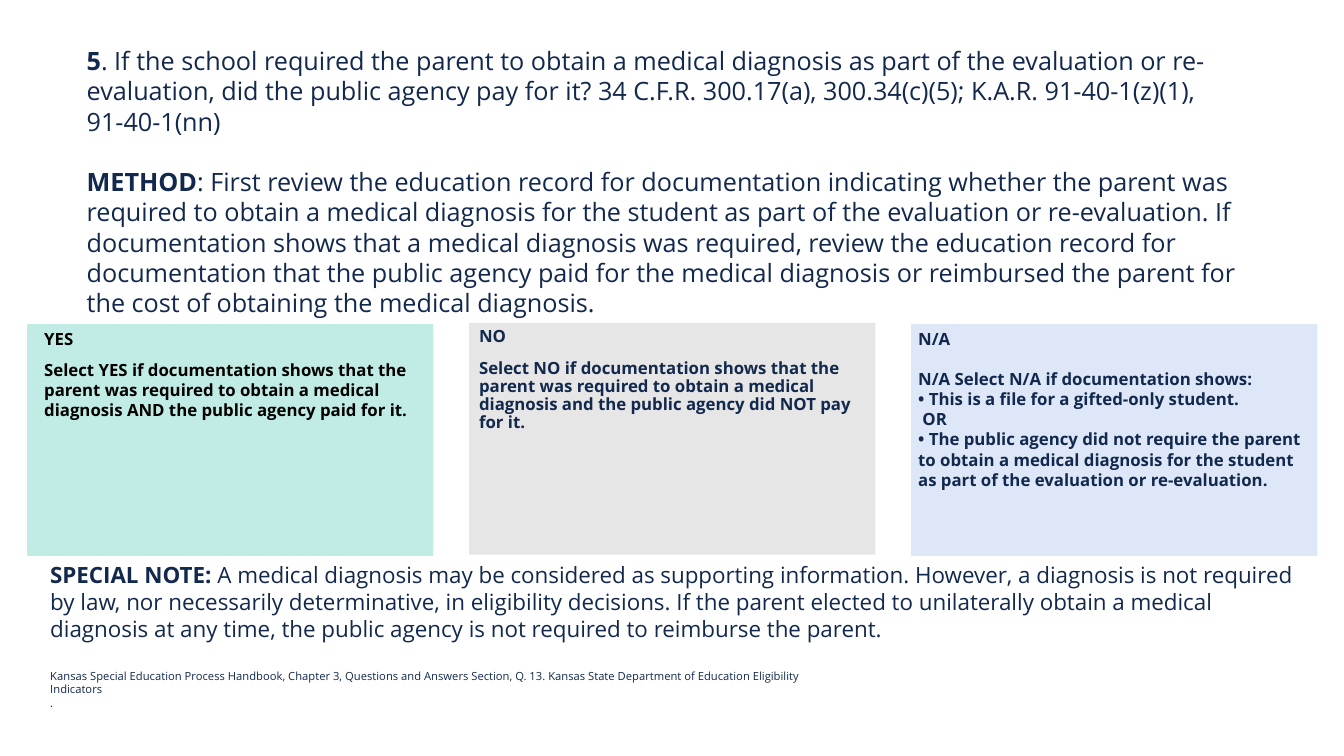
from pptx import Presentation
from pptx.dml.color import RGBColor
from pptx.enum.shapes import MSO_SHAPE
from pptx.enum.text import MSO_ANCHOR, MSO_AUTO_SIZE, PP_ALIGN
from pptx.util import Pt

RECT = MSO_SHAPE.RECTANGLE
TOP = MSO_ANCHOR.TOP
LEFT = PP_ALIGN.LEFT
NO_FIT = MSO_AUTO_SIZE.NONE

FONT = "Open Sans"
COLORS = {
    "navy": "12284C",
    "black": "000000",
    "mint": "C1ECE5",
    "grey": "E6E6E6",
    "blue": "DDE7F7",
}

# Answer cards: equal widths at an equal pitch
CARD_LEFT, CARD_PITCH = 19.4, 315.75
CARD_WIDTH, CARD_HEIGHT = 290.2, 165.6

QUESTION = [
    ("5", ". If the school required the parent to obtain a medical diagnosis as part of "
          "the evaluation or re-evaluation, did the public agency pay for it? "
          "34 C.F.R. 300.17(a), 300.34(c)(5); K.A.R. 91-40-1(z)(1), 91-40-1(nn)"),
    ("METHOD", ": First review the education record for documentation indicating whether "
               "the parent was required to obtain a medical diagnosis for the student as "
               "part of the evaluation or re-evaluation. If documentation shows that a "
               "medical diagnosis was required, review the education record for "
               "documentation that the public agency paid for the medical diagnosis or "
               "reimbursed the parent for the cost of obtaining the medical diagnosis."),
]
YES = [
    "YES",
    "Select YES if documentation shows that the parent was required to obtain a medical "
    "diagnosis AND the public agency paid for it.",
]
NO = [
    "NO",
    "Select NO if documentation shows that the parent was required to obtain a medical "
    "diagnosis and the public agency did NOT pay for it.",
]
NOT_APPLICABLE = [
    "N/A",
    "N/A Select N/A if documentation shows:",
    "• This is a file for a gifted-only student.",
    " OR",
    "• The public agency did not require the parent to obtain a medical diagnosis for "
    "the student as part of the evaluation or re-evaluation.",
]
NOTE = [
    ("SPECIAL NOTE: ",
     "A medical diagnosis may be considered as supporting information. However, a "
     "diagnosis is not required by law, nor necessarily determinative, in eligibility "
     "decisions. If the parent elected to unilaterally obtain a medical diagnosis at any "
     "time, the public agency is not required to reimburse the parent."),
]
SOURCE = [
    ("", "Kansas Special Education Process Handbook, Chapter 3, Questions and Answers "
         "Section, Q. 13. Kansas State Department of Education Eligibility Indicators"),
    ("", "."),
]


def rgb(name):
    return RGBColor.from_string(COLORS[name])


def style_run(r, size, color, bold):
    r.font.name = FONT
    r.font.size = Pt(size)
    r.font.bold = bold
    r.font.color.rgb = rgb(color)


def setup_frame(tf, inset_x=7.2, inset_y=3.6):
    tf.word_wrap = True
    tf.auto_size = NO_FIT
    tf.vertical_anchor = TOP
    tf.margin_left = tf.margin_right = Pt(inset_x)
    tf.margin_top = tf.margin_bottom = Pt(inset_y)


def next_paragraph(tf, i, gap):
    """Return the i-th paragraph, with the gap above all but the first."""
    p = tf.add_paragraph() if i else tf.paragraphs[0]
    p.alignment = LEFT
    p.space_before = Pt(gap if i else 0)
    return p


def fill_labelled(tf, items, size, gap=0):
    """Write paragraphs that open with a bold label."""
    setup_frame(tf)
    for i, (label, body) in enumerate(items):
        p = next_paragraph(tf, i, gap)
        for text, bold in ((label, True), (body, False)):
            if text:
                r = p.add_run()
                r.text = text
                style_run(r, size, "navy", bold)


def add_title(slide, items, left, top, width, height):
    sp = slide.shapes.title
    sp.left, sp.top, sp.width, sp.height = Pt(left), Pt(top), Pt(width), Pt(height)
    fill_labelled(sp.text_frame, items, 18, gap=21.6)


def add_text(slide, items, left, top, width, height, size):
    sp = slide.shapes.add_textbox(Pt(left), Pt(top), Pt(width), Pt(height))
    fill_labelled(sp.text_frame, items, size)


def add_card(slide, column, top, fill, lines, color="navy", gap=10,
             insets=(5, 3), indent=0, spacing=1.0):
    sp = slide.shapes.add_shape(RECT, Pt(CARD_LEFT + column * CARD_PITCH), Pt(top),
                                Pt(CARD_WIDTH), Pt(CARD_HEIGHT))
    sp.shadow.inherit = False
    sp.fill.solid()
    sp.fill.fore_color.rgb = rgb(fill)
    sp.line.fill.background()
    tf = sp.text_frame
    setup_frame(tf, *insets)
    for i, text in enumerate(lines):
        p = next_paragraph(tf, i, gap if i == 1 else 0)
        p.text = text
        p.line_spacing = spacing
        p._p.get_or_add_pPr().set("marL", str(Pt(indent)))
        p._p.get_or_add_pPr().set("indent", "0")
        style_run(p.runs[0], 12, color, True)


def main():
    prs = Presentation()
    prs.slide_width, prs.slide_height = Pt(960), Pt(540)
    slide = prs.slides.add_slide(prs.slide_layouts[5])

    # Question and method
    add_title(slide, QUESTION, 54.7, 28.8, 836.6, 203.8)

    # Answer cards
    add_card(slide, 0, 231.6, "mint", YES, color="black", gap=8, indent=7.2)
    add_card(slide, 1, 230.6, "grey", NO, insets=(7.2, 3.6), spacing=0.9)
    add_card(slide, 2, 231.6, "blue", NOT_APPLICABLE, gap=14.4)

    # Special note and source
    add_text(slide, NOTE, 28.8, 397.4, 902.2, 65.5, 16)
    add_text(slide, SOURCE, 28.8, 474.5, 572.4, 26.6, 8)

    prs.save("out.pptx")


if __name__ == "__main__":
    main()
